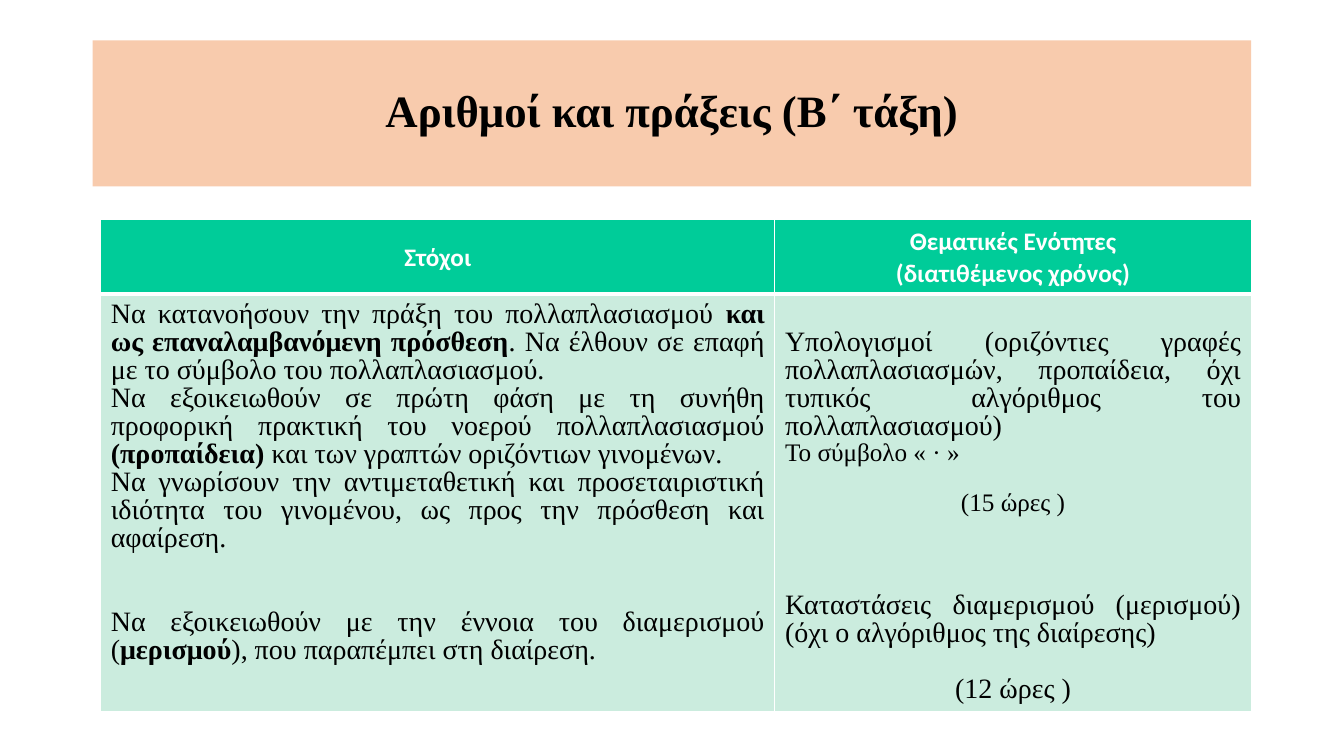
from pptx import Presentation, util as u
from pptx.dml.color import RGBColor
from pptx.enum import shapes, text
from pptx.oxml import parse_xml
from pptx.oxml.ns import nsdecls

COLORS = {"banner": "F8CBAD", "header": "00CC99", "body": "CBECDE",
          "white": "FFFFFF", "black": "000000"}
SERIF, SANS = "Times New Roman", "Calibri"
CENTER, JUSTIFY = text.PP_ALIGN.CENTER, text.PP_ALIGN.JUSTIFY
THIN, THICK = 0.91, 2.95

HEADERS = [["Στόχοι"], ["Θεματικές Ενότητες", "(διατιθέμενος χρόνος)"]]
GOALS = [
    (JUSTIFY, 20, 0, ["Να κατανοήσουν την πράξη του πολλαπλασιασμού ",
                      "και ως επαναλαμβανόμενη πρόσθεση",
                      ". Να έλθουν σε επαφή με το σύμβολο του πολλαπλασιασμού."]),
    (JUSTIFY, 20, 0, ["Να εξοικειωθούν σε πρώτη φάση με τη συνήθη προφορική πρακτική "
                      "του νοερού πολλαπλασιασμού ",
                      "(προπαίδεια) ", "και των γραπτών οριζόντιων γινομένων."]),
    (JUSTIFY, 20, 0, ["Να γνωρίσουν την αντιμεταθετική και προσεταιριστική ιδιότητα "
                      "του γινομένου, ως προς την πρόσθεση και αφαίρεση."]),
    (JUSTIFY, 20, 40, ["Να εξοικειωθούν με την έννοια του διαμερισμού (",
                       "μερισμού", "), που παραπέμπει στη διαίρεση."]),
]
UNITS = [
    (JUSTIFY, 20, 0, ["Υπολογισμοί (οριζόντιες γραφές πολλαπλασιασμών, προπαίδεια, "
                      "όχι τυπικός αλγόριθμος του πολλαπλασιασμού)"]),
    (JUSTIFY, 18, 0, ["Το σύμβολο « · »"]),
    (CENTER, 18, 18, ["(15 ώρες )"]),
    (JUSTIFY, 20, 54, ["Καταστάσεις διαμερισμού (μερισμού) (όχι ο αλγόριθμος της διαίρεσης)"]),
    (CENTER, 20, 20, ["(12 ώρες )"]),
]


def color(name):
    """Return the named palette colour."""
    return RGBColor.from_string(COLORS[name])


def style_paragraph(paragraph, alignment, size, font_name, font_color, spacing, gap=0):
    """Set the alignment, spacing and font of a paragraph."""
    paragraph.alignment = alignment
    paragraph.line_spacing = spacing
    paragraph.space_before = u.Pt(gap)
    paragraph.font.size = u.Pt(size)
    paragraph.font.name = font_name
    paragraph.font.color.rgb = color(font_color)


def style_cell(cell, fill, top_margin, borders):
    """Fill a cell and give it margins and white borders."""
    cell.margin_left = cell.margin_right = u.Inches(0.1)
    cell.margin_top, cell.margin_bottom = u.Inches(top_margin), u.Inches(0.05)
    properties = cell._tc.get_or_add_tcPr()
    for side, width in zip("LRTB", borders):
        properties.append(parse_xml(
            f'<a:ln{side} {nsdecls("a")} w="{u.Pt(width)}"><a:solidFill>'
            f'<a:srgbClr val="{COLORS["white"]}"/></a:solidFill></a:ln{side}>'))
    cell.fill.solid()
    cell.fill.fore_color.rgb = color(fill)


def add_banner(slide, left, top, width, height):
    """Draw the title banner in its box."""
    shape = slide.shapes.add_shape(shapes.MSO_SHAPE.RECTANGLE, left, top, width, height)
    shape.shadow.inherit = False
    shape.fill.solid()
    shape.fill.fore_color.rgb = color("banner")
    shape.line.fill.background()
    shape.text_frame.word_wrap = True
    shape.text_frame.vertical_anchor = text.MSO_ANCHOR.MIDDLE
    paragraph = shape.text_frame.paragraphs[0]
    paragraph.text = "Αριθμοί και πράξεις (B΄ τάξη)"
    style_paragraph(paragraph, CENTER, 32, SERIF, "black", 0.9)
    paragraph.font.bold = True


def fill_header(cell, lines):
    """Write the centred lines of a header cell."""
    style_cell(cell, "header", 0.05, (THIN, THIN, THIN, THICK))
    cell.vertical_anchor = text.MSO_ANCHOR.MIDDLE
    cell.text_frame.text = "\n".join(lines)
    for paragraph in cell.text_frame.paragraphs:
        style_paragraph(paragraph, CENTER, 18, SANS, "white", 1.04)
        paragraph.font.bold = True


def fill_body(cell, entries, top_margin):
    """Write body paragraphs, with every second run in bold."""
    style_cell(cell, "body", top_margin, (THIN, THIN, THICK, THIN))
    frame = cell.text_frame
    for index, (alignment, size, gap, runs) in enumerate(entries):
        paragraph = frame.add_paragraph() if index else frame.paragraphs[0]
        style_paragraph(paragraph, alignment, size, SERIF, "black", 0.9, gap)
        for position, words in enumerate(runs):
            run = paragraph.add_run()
            run.text = words
            run.font.bold = position % 2 == 1


def add_goals_table(slide, left, top, width, height):
    """Draw the table of goals and thematic units in its box."""
    table = slide.shapes.add_table(2, 2, left, top, width, height).table
    table.first_row = table.horz_banding = False
    table.columns[0].width = int(width * 0.586)
    table.columns[1].width = width - table.columns[0].width
    table.rows[0].height = u.Inches(0.71)
    table.rows[1].height = height - table.rows[0].height
    for column, lines in enumerate(HEADERS):
        fill_header(table.cell(0, column), lines)
    fill_body(table.cell(1, 0), GOALS, 0.07)
    fill_body(table.cell(1, 1), UNITS, 0.35)


def main():
    """Build and save the slide."""
    presentation = Presentation()
    presentation.slide_width = u.Inches(13.34)
    presentation.slide_height = u.Inches(7.5)
    slide = presentation.slides.add_slide(presentation.slide_layouts[6])
    add_banner(slide, *map(u.Inches, (0.92, 0.4, 11.5, 1.45)))
    add_goals_table(slide, *map(u.Inches, (1, 2.18, 11.42, 4.85)))
    presentation.save("out.pptx")


if __name__ == "__main__":
    main()
